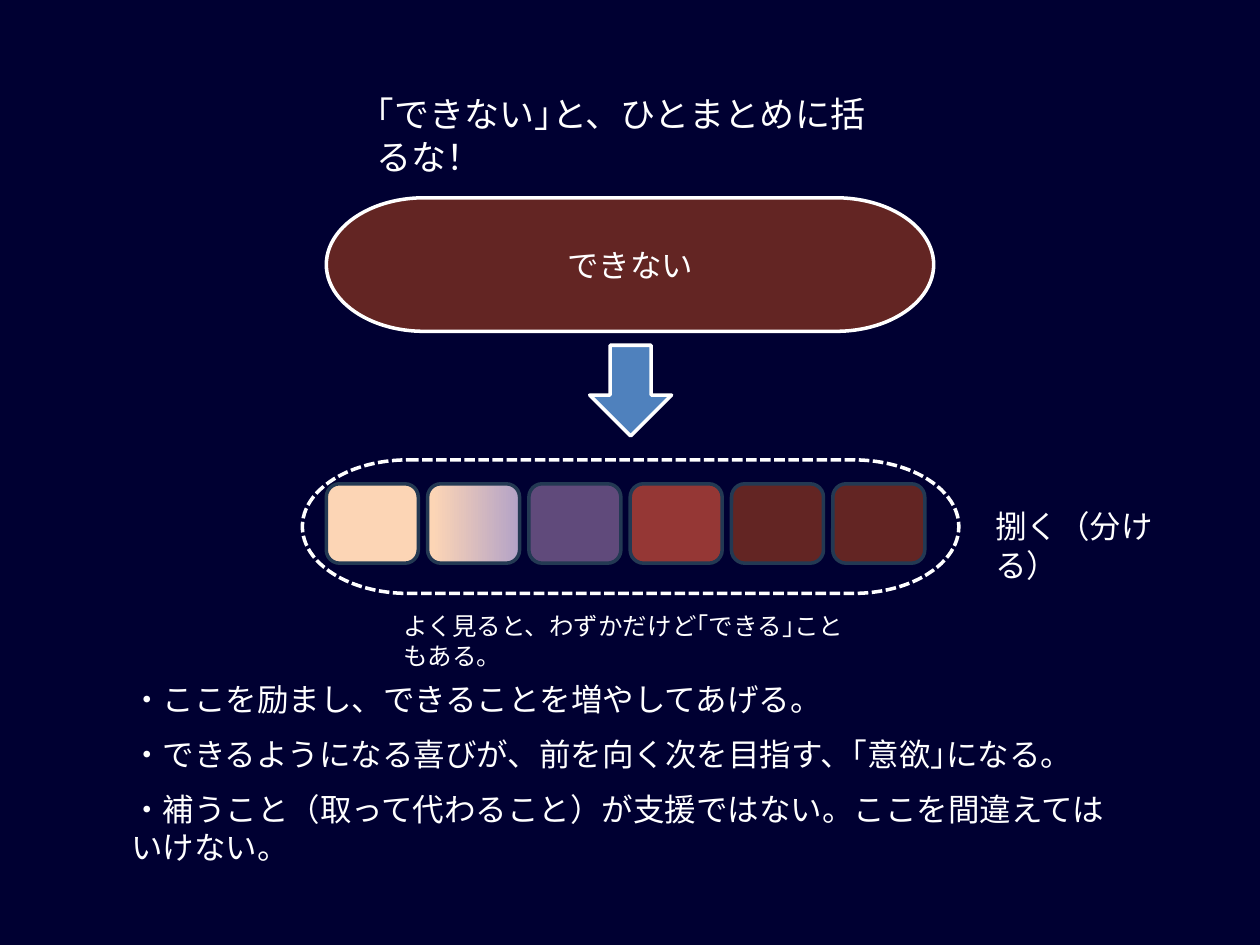
from lxml.etree import SubElement
from pptx import Presentation
from pptx.dml.color import RGBColor
from pptx.enum.dml import MSO_LINE
from pptx.enum.shapes import MSO_SHAPE
from pptx.enum.text import MSO_ANCHOR, MSO_AUTO_SIZE, PP_ALIGN
from pptx.oxml.ns import qn
from pptx.util import Inches, Pt

COLORS = {
    "night": "000032",
    "white": "FFFFFF",
    "maroon": "632523",
    "red": "953735",
    "purple": "604A7B",
    "lilac": "B3A2C7",
    "peach": "FCD5B5",
    "arrow": "4F81BD",
    "edge": "233953",
}
JAPANESE = "Noto Sans CJK JP"
STEPS = ["peach", ("peach", "lilac"), "purple", "red", "maroon", "maroon"]
LESSONS = [
    "・ここを励まし、できることを増やしてあげる。",
    "・できるようになる喜びが、前を向く次を目指す、｢意欲｣になる。",
    "・補うこと（取って代わること）が支援ではない。ここを間違えてはいけない。",
]


def rgb(name):
    return RGBColor.from_string(COLORS[name])


def inches(box):
    return [Inches(length) for length in box]


def style_run(run, size, font=JAPANESE):
    run.font.size = Pt(size)
    run.font.name = font
    run.font.color.rgb = rgb("white")
    SubElement(run.font._element, qn("a:ea")).set("typeface", JAPANESE)


def write(holder, lines, size, gap=0):
    frame = holder.text_frame
    frame.word_wrap = True
    frame.auto_size = MSO_AUTO_SIZE.NONE
    frame.vertical_anchor = MSO_ANCHOR.TOP
    for index, line in enumerate(lines):
        paragraph = frame.paragraphs[0] if index == 0 else frame.add_paragraph()
        paragraph.text = line
        paragraph.alignment = PP_ALIGN.LEFT
        paragraph.line_spacing = Pt(size * 1.22)
        paragraph.space_before = Pt(gap if index else 0)
        style_run(paragraph.runs[0], size)
    return frame


def place(placeholder, box):
    placeholder.left, placeholder.top, placeholder.width, placeholder.height = inches(box)
    return placeholder


def add_title(slide, box):
    write(place(slide.shapes.title, box), ["｢できない｣と、ひとまとめに括るな！"], 20)


def add_lessons(slide, box):
    frame = write(place(slide.placeholders[1], box), LESSONS, 18, gap=9.5)
    for paragraph in frame.paragraphs:
        properties = paragraph._p.get_or_add_pPr()
        properties.set("marL", "0")
        properties.set("indent", "0")
        SubElement(properties, qn("a:buNone"))


def add_label(slide, box, text, size):
    write(slide.shapes.add_textbox(*inches(box)), [text], size)


def add_outlined(slide, kind, box, fill=None, line="white"):
    shape = slide.shapes.add_shape(kind, *inches(box))
    shape.shadow.inherit = False
    shape.line.color.rgb = rgb(line)
    shape.line.width = Pt(2)
    if fill is None:
        shape.fill.background()
    elif isinstance(fill, tuple):
        shape.fill.gradient()
        shape.fill.gradient_angle = 0
        for stop, position, color in zip(shape.fill.gradient_stops, (0.06, 1), fill):
            stop.position = position
            stop.color.rgb = rgb(color)
    else:
        shape.fill.solid()
        shape.fill.fore_color.rgb = rgb(fill)
    return shape


def add_cannot(slide, box):
    cannot = add_outlined(slide, MSO_SHAPE.FLOWCHART_TERMINATOR, box, "maroon")
    frame = cannot.text_frame
    frame.text = "できない"
    frame.vertical_anchor = MSO_ANCHOR.MIDDLE
    frame.paragraphs[0].alignment = PP_ALIGN.CENTER
    style_run(frame.paragraphs[0].runs[0], 18, "Calibri")


def add_steps(slide, box):
    left, top, width, height = box
    step_width, step_height = 0.73, 0.63
    first = left + 0.19
    pitch = (width - 0.46 - step_width) / (len(STEPS) - 1)
    for index, fill in enumerate(STEPS):
        step_box = (first + index * pitch, top + 0.19, step_width, step_height)
        add_outlined(slide, MSO_SHAPE.ROUNDED_RECTANGLE, step_box, fill, "edge")
    outline = add_outlined(slide, MSO_SHAPE.FLOWCHART_TERMINATOR, box)
    outline.line.dash_style = MSO_LINE.SQUARE_DOT
    add_label(slide, (left + 0.7, top + 1.15, 3.82, 0.58),
              "よく見ると、わずかだけど｢できる｣こともある。", 14)
    add_label(slide, (left + 5.4, top + 0.32, 1.68, 0.71), "捌く（分ける）", 18)


def main():
    presentation = Presentation()
    presentation.slide_width, presentation.slide_height = Inches(10), Inches(7.5)
    slide = presentation.slides.add_slide(presentation.slide_layouts[1])
    slide.background.fill.solid()
    slide.background.fill.fore_color.rgb = rgb("night")
    add_title(slide, (2.89, 0.68, 4.21, 0.78))
    add_cannot(slide, (2.59, 1.57, 4.82, 1.06))
    add_outlined(slide, MSO_SHAPE.DOWN_ARROW, (4.68, 2.74, 0.65, 0.72), "arrow")
    add_steps(slide, (2.4, 3.65, 5.21, 1.06))
    add_lessons(slide, (0.94, 5.34, 8.12, 1.55))
    presentation.save("out.pptx")


if __name__ == "__main__":
    main()
